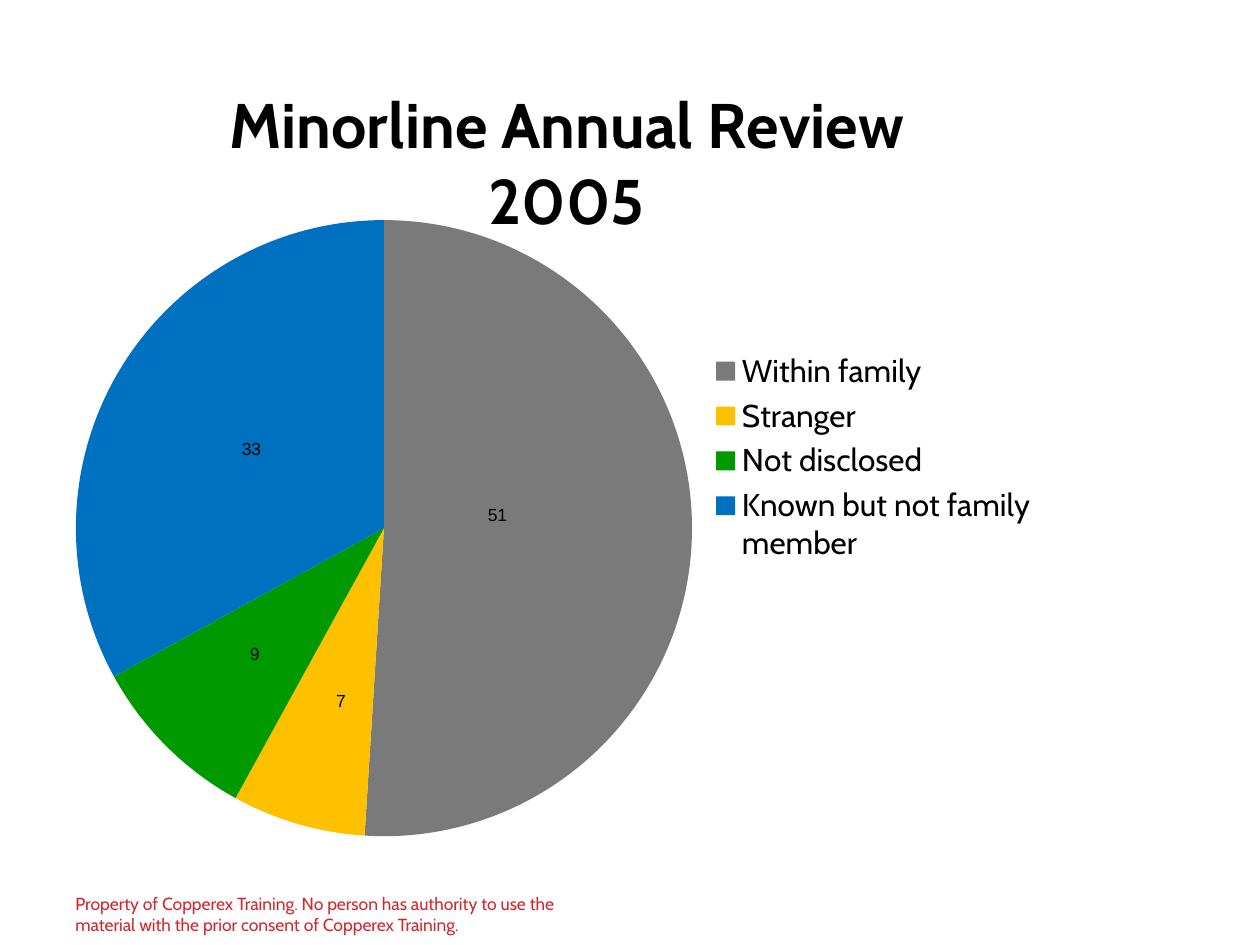
from dataclasses import dataclass

import lxml.etree
import pptx
import pptx.chart.data
import pptx.dml.color
import pptx.enum.chart
import pptx.enum.text
import pptx.oxml.ns
import pptx.util

EMU_PER_PX = 914400 / 126
BLACK = pptx.dml.color.RGBColor(0x00, 0x00, 0x00)
GREY = pptx.dml.color.RGBColor(0x7A, 0x7A, 0x7A)
AMBER = pptx.dml.color.RGBColor(0xFF, 0xC0, 0x00)
GREEN = pptx.dml.color.RGBColor(0x00, 0x99, 0x00)
BLUE = pptx.dml.color.RGBColor(0x00, 0x70, 0xC0)
RED = pptx.dml.color.RGBColor(0xD1, 0x28, 0x2E)
FONT = "Cabin"
REVIEW_TITLE = "Minorline Annual Review 2005"
NOTICE = (
    "Property of Copperex Training. No person has authority to use the "
    "material with the prior consent of Copperex Training."
)


@dataclass(frozen=True)
class Slice:
    category: str
    value: int
    color: pptx.dml.color.RGBColor
    label_x: float = 0
    label_y: float = 0


SLICES = [
    Slice("Within family", 51, GREY, -0.04, -0.02),
    Slice("Stranger", 7, AMBER, 0, 0.03),
    Slice("Not disclosed", 9, GREEN, -0.02, 0.02),
    Slice("Known but not family member", 33, BLUE),
]


def px(length: int) -> pptx.util.Emu:
    """Convert px to EMU."""
    return pptx.util.Emu(round(length * EMU_PER_PX))


def style_font(font, size: int, color, name: str = FONT, bold: bool = False) -> None:
    """Set the look of a font."""
    font.name = name
    font.size = pptx.util.Pt(size)
    font.bold = bold
    font.color.rgb = color


def set_layout(parent, index: int, **settings) -> None:
    """Give a chart part a manual layout at its place in the schema order."""
    qn = pptx.oxml.ns.qn
    for old_layout in parent.findall(qn("c:layout")):
        parent.remove(old_layout)
    layout = lxml.etree.Element(qn("c:layout"))
    manual = lxml.etree.SubElement(layout, qn("c:manualLayout"))
    for tag, value in settings.items():
        lxml.etree.SubElement(manual, qn(f"c:{tag}")).set("val", str(value))
    parent.insert(index, layout)


def draw_slice(series, index: int, part: Slice) -> None:
    """Colour one slice and style its label."""
    point = series.points[index]
    point.format.fill.solid()
    point.format.fill.fore_color.rgb = part.color
    label = point.data_label
    style_font(label.font, 10, BLACK, "Arial")
    label.position = pptx.enum.chart.XL_LABEL_POSITION.CENTER


def draw_review_chart(slide) -> None:
    """Draw the pie chart with its title, legend and labels."""
    review = pptx.chart.data.CategoryChartData(number_format="General")
    review.categories = [part.category for part in SLICES]
    review.add_series(REVIEW_TITLE, [part.value for part in SLICES])
    chart = slide.shapes.add_chart(
        pptx.enum.chart.XL_CHART_TYPE.PIE, px(35), px(26), px(1016), px(863), review
    ).chart
    style_font(chart.font, 18, BLACK)

    chart.has_title = True
    heading = chart.chart_title.text_frame
    heading.text = REVIEW_TITLE
    heading.paragraphs[0].alignment = pptx.enum.text.PP_ALIGN.CENTER
    style_font(heading.paragraphs[0].runs[0].font, 36, BLACK, bold=True)

    chart.has_legend = True
    chart.legend.position = pptx.enum.chart.XL_LEGEND_POSITION.RIGHT
    chart.legend.include_in_layout = False
    style_font(chart.legend.font, 18, BLACK)

    plot = chart.plots[0]
    plot.vary_by_categories = True
    for index, part in enumerate(SLICES):
        draw_slice(plot.series[0], index, part)

    root = chart.element
    set_layout(root.find(".//" + pptx.oxml.ns.qn("c:title")), 1,
               xMode="edge", yMode="edge", x=0.18, y=0.05)
    set_layout(root.find(".//" + pptx.oxml.ns.qn("c:plotArea")), 0,
               layoutTarget="inner", xMode="edge", yMode="edge",
               x=0.04, y=0.225, w=0.607, h=0.714)
    set_layout(root.find(".//" + pptx.oxml.ns.qn("c:legend")), 1,
               xMode="edge", yMode="edge", x=0.66, y=0.37, w=0.33, h=0.26)
    labels = root.findall(".//" + pptx.oxml.ns.qn("c:dLbl"))
    for label, part in zip(labels, SLICES):
        set_layout(label, 1, x=part.label_x, y=part.label_y)


def draw_notice(slide) -> None:
    """Write the ownership notice at the foot of the slide."""
    frame = slide.shapes.add_textbox(px(63), px(903), px(504), px(32)).text_frame
    frame.word_wrap = True
    frame.vertical_anchor = pptx.enum.text.MSO_ANCHOR.BOTTOM
    frame.margin_top = frame.margin_bottom = 0
    frame.text = NOTICE
    style_font(frame.paragraphs[0].runs[0].font, 10, RED)


def main() -> None:
    """Build and save the slide."""
    deck = pptx.Presentation()
    deck.slide_width, deck.slide_height = px(1260), px(945)
    slide = deck.slides.add_slide(deck.slide_layouts[6])
    draw_notice(slide)
    draw_review_chart(slide)
    deck.save("out.pptx")


if __name__ == "__main__":
    main()
